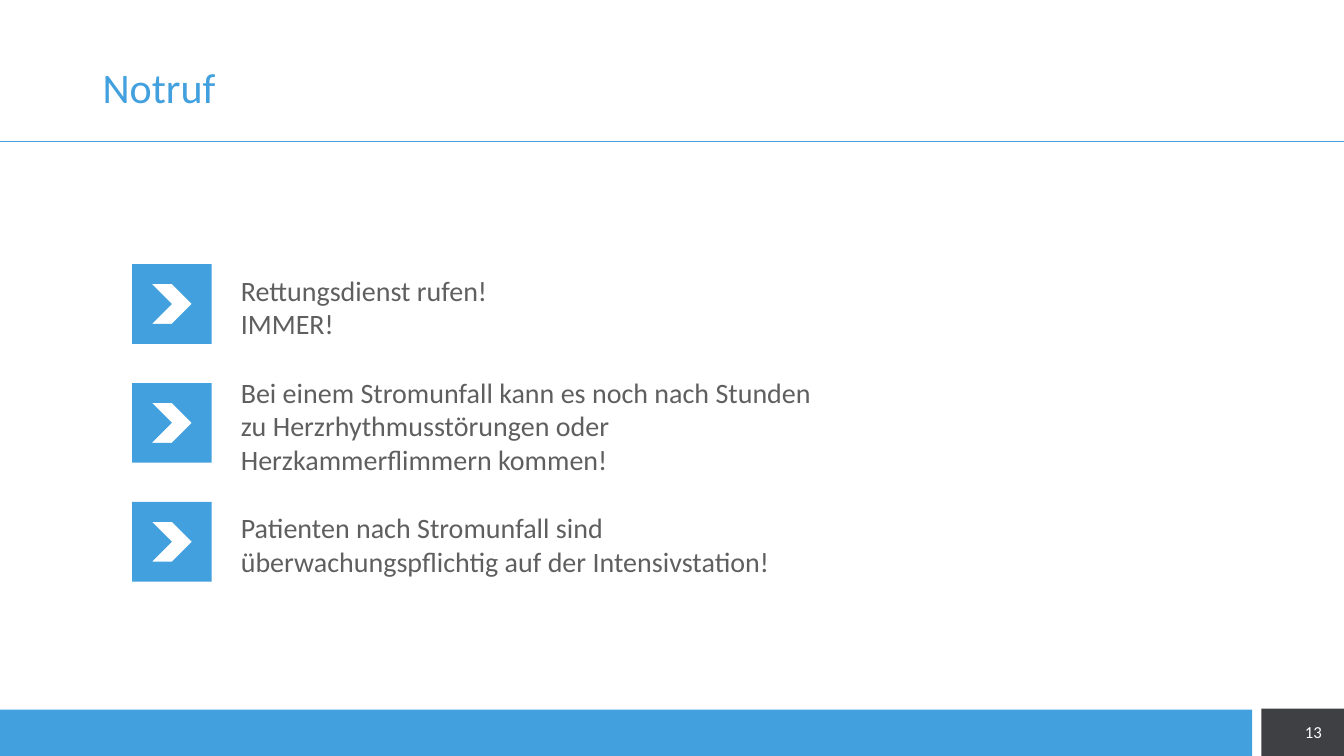
"""Build the emergency call slide with three chevron-marked statements."""
from dataclasses import dataclass

from pptx import Presentation
from pptx.dml.color import RGBColor
from pptx.enum.shapes import MSO_CONNECTOR as Connector, MSO_SHAPE as Shape
from pptx.enum.text import MSO_ANCHOR as Anchor, PP_ALIGN as Align
from pptx.oxml.ns import qn
from pptx.util import Inches, Pt
from lxml.etree import SubElement

TITLE = "Notruf"
PAGE_NUMBER = "13"
STATEMENTS = [
    ("Rettungsdienst rufen!\vIMMER!", 2),
    ("Bei einem Stromunfall kann es noch nach Stunden zu Herzrhythmusstörungen "
     "oder Herzkammerflimmern kommen!", 3),
    ("Patienten nach Stromunfall sind überwachungspflichtig auf der "
     "Intensivstation!", 2),
]


@dataclass(frozen=True)
class Theme:
    font: str = "Calibri"
    blue: str = "42A0DE"
    dark: str = "3F4044"
    grey: str = "5F5F5F"
    white: str = "FFFFFF"
    title_size: int = 30
    body_size: int = 20
    number_size: int = 12


THEME = Theme()
WIDTH, HEIGHT = 13.33, 7.5
RULE_TOP = 1.4
FOOTER_HEIGHT = 0.47
FOOTER_TOP = HEIGHT - FOOTER_HEIGHT
BAR_WIDTH, NUMBER_LEFT = 12.42, 12.51

ICON_LEFT, ICON_SIZE = 1.31, 0.79
FIRST_ROW, ROW_PITCH = 2.62, 1.18
TEXT_LEFT, TEXT_WIDTH = 2.29, 5.94
TEXT_SHIFT, LINE_HEIGHT, INSETS = 0.03, 0.335, 0.1

SQUARE = [(0, 0), (1, 0), (1, 1), (0, 1)]
CHEVRON = [(0.25, 0.25), (0.5, 0.5), (0.25, 0.75),
           (0.5, 0.75), (0.75, 0.5), (0.5, 0.25)]


def paint(shape, color):
    shape.shadow.inherit = False
    shape.fill.solid()
    shape.fill.fore_color.rgb = RGBColor.from_string(color)
    shape.line.fill.background()


def add_block(page, left, top, width, height, color):
    block = page.shapes.add_shape(
        Shape.RECTANGLE, *map(Inches, (left, top, width, height)))
    paint(block, color)


def add_text(page, text, area, size, color, anchor=Anchor.MIDDLE,
             align=Align.LEFT, spacing=1.0):
    box = page.shapes.add_textbox(*map(Inches, area))
    frame = box.text_frame
    frame.word_wrap = True
    frame.vertical_anchor = anchor
    frame.text = text
    para = frame.paragraphs[0]
    para.alignment = align
    para.line_spacing = spacing
    for span in para.runs:
        span.font.name = THEME.font
        span.font.size = Pt(size)
        span.font.color.rgb = RGBColor.from_string(color)


def add_rule(page):
    rule = page.shapes.add_connector(
        Connector.STRAIGHT, 0, Inches(RULE_TOP), Inches(WIDTH), Inches(RULE_TOP))
    rule.line.width = Pt(0.5)
    rule.line.color.rgb = RGBColor.from_string(THEME.blue)
    SubElement(rule._element.spPr, qn("a:effectLst"))


def add_icon(page, top):
    def place(outline):
        return [(Inches(ICON_LEFT + x * ICON_SIZE), Inches(top + y * ICON_SIZE))
                for x, y in outline]

    chevron, square = place(CHEVRON), place(SQUARE)
    builder = page.shapes.build_freeform(*chevron[0])
    builder.add_line_segments(chevron[1:], close=True)
    builder.move_to(*square[0])
    builder.add_line_segments(square[1:], close=True)
    paint(builder.convert_to_shape(), THEME.blue)


def add_statement(page, row, text, lines):
    top = FIRST_ROW + row * ROW_PITCH
    height = INSETS + lines * LINE_HEIGHT
    text_top = top + ICON_SIZE / 2 + TEXT_SHIFT - height / 2
    add_icon(page, top)
    add_text(page, text, (TEXT_LEFT, text_top, TEXT_WIDTH, height),
             THEME.body_size, THEME.grey, anchor=Anchor.TOP)


def main():
    deck = Presentation()
    deck.slide_width, deck.slide_height = Inches(WIDTH), Inches(HEIGHT)
    page = deck.slides.add_slide(deck.slide_layouts[6])
    add_block(page, NUMBER_LEFT, FOOTER_TOP, WIDTH - NUMBER_LEFT,
              FOOTER_HEIGHT, THEME.dark)
    add_block(page, 0, FOOTER_TOP + 0.01, BAR_WIDTH, FOOTER_HEIGHT, THEME.blue)
    add_rule(page)
    add_text(page, TITLE, (0.92, 0.4, 11.5, 0.98),
             THEME.title_size, THEME.blue, spacing=0.9)
    add_text(page, PAGE_NUMBER, (12.64, 7.06, 0.57, 0.4),
             THEME.number_size, THEME.white, align=Align.RIGHT)
    for row, (text, lines) in enumerate(STATEMENTS):
        add_statement(page, row, text, lines)
    deck.save("out.pptx")


if __name__ == "__main__":
    main()
